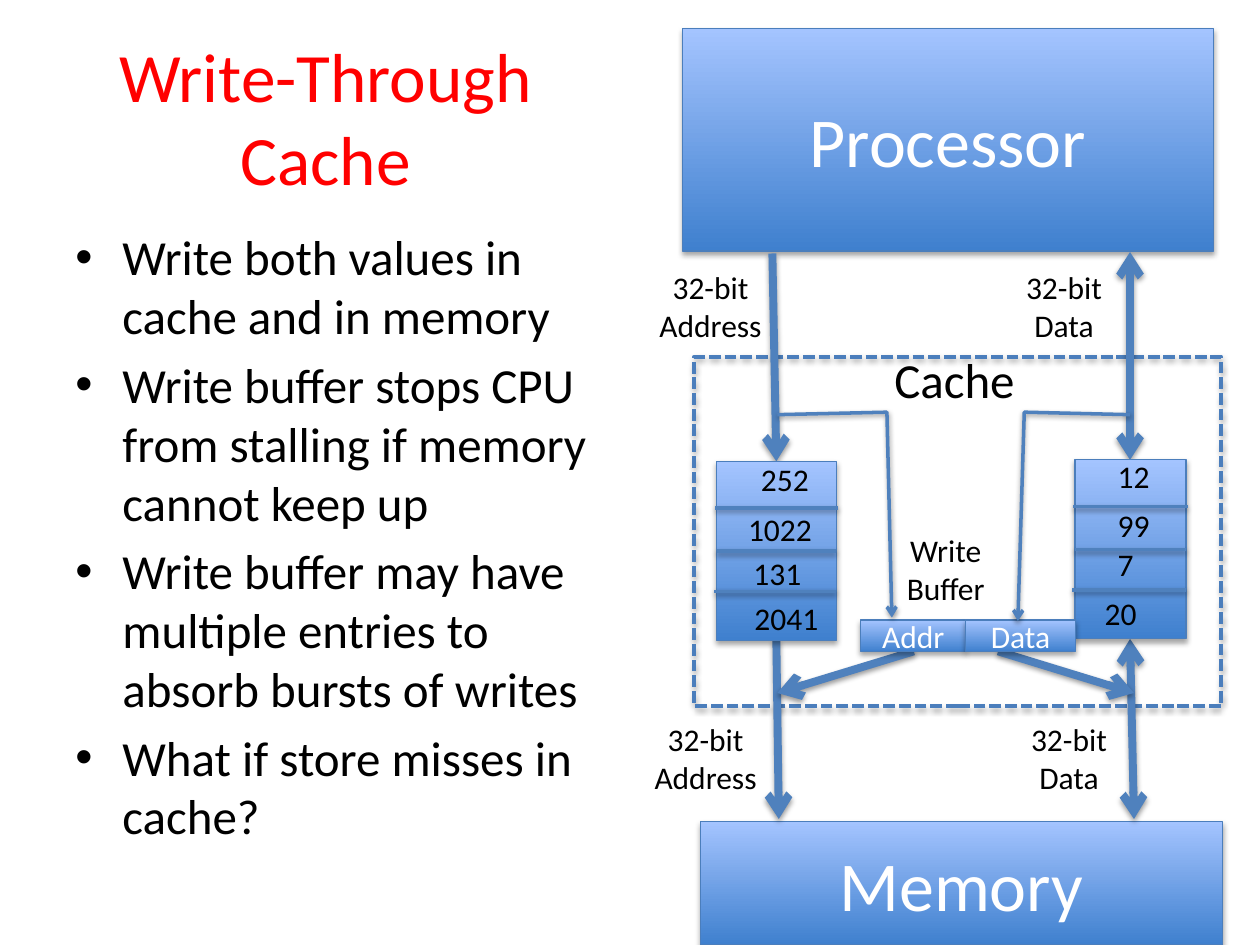
"""Build the write-through cache slide."""
from dataclasses import dataclass

from lxml import etree
from pptx import Presentation
from pptx import util as u
from pptx.dml.color import RGBColor
from pptx.enum import dml, shapes, text
from pptx.oxml.ns import qn


@dataclass(frozen=True)
class Theme:
    font: str = "Calibri"
    red: str = "FF0000"
    black: str = "000000"
    white: str = "FFFFFF"
    dark: str = "3F80CE"
    light: str = "A4C4FF"
    edge: str = "4B7EBC"
    arrow: str = "4F81BD"
    title: float = 39.6
    block: float = 40
    body: float = 28
    label: float = 18
    thick: float = 4.5
    thin: float = 2


@dataclass(frozen=True)
class Box:
    x: float
    y: float
    w: float
    h: float

    def emu(self) -> list[u.Cm]:
        return [u.Cm(v) for v in (self.x, self.y, self.w, self.h)]


@dataclass(frozen=True)
class Block:
    box: Box
    text: str
    size: float


@dataclass(frozen=True)
class Label:
    box: Box
    lines: tuple[str, ...]
    align: text.PP_ALIGN = text.PP_ALIGN.CENTER
    size: float = Theme.label
    wrap: bool = False


@dataclass(frozen=True)
class Arrow:
    start: tuple[float, float]
    end: tuple[float, float]
    both: bool = False


@dataclass(frozen=True)
class Column:
    box: Box
    cells: tuple[tuple[str, float, float, float, bool], ...]


T = Theme()
LEFT = text.PP_ALIGN.LEFT
CELL_H = 1.02
DIVIDERS = ((0.94, -0.03, 0.03), (1.81, 0, 0), (2.62, -0.05, 0))

BLOCKS = (
    Block(Box(13.76, 0.58, 10.7, 4.48), "Processor", T.block),
    Block(Box(14.12, 16.56, 10.52, 2.49), "Memory", T.block),
)
BUFFER = (
    Block(Box(17.35, 12.5, 2.12, 0.64), "Addr", T.label),
    Block(Box(19.47, 12.5, 2.21, 0.64), "Data", T.label),
)
FRAME = Box(14, 7.19, 10.62, 7.04)
LABELS = (
    Label(Box(13.03, 5.28, 2.59, 1.8), ("32-bit", "Address")),
    Label(Box(20.42, 5.28, 2.06, 1.8), ("32-bit", "Data")),
    Label(Box(12.93, 14.4, 2.59, 1.8), ("32-bit", "Address")),
    Label(Box(20.52, 14.4, 2.06, 1.8), ("32-bit", "Data")),
    Label(Box(17.78, 6.93, 2.97, 1.45), ("Cache",), LEFT, T.body),
    Label(Box(17.58, 10.59, 2.97, 1.8), ("Write Buffer",), wrap=True),
)
ARROWS = (
    Arrow((15.57, 5.11), (15.65, 9.3)),
    Arrow((15.65, 12.9), (15.7, 16.51)),
    Arrow((22.78, 5.08), (22.78, 9.27), True),
    Arrow((22.78, 12.88), (22.86, 16.51), True),
    Arrow((18.42, 13.13), (15.67, 13.97)),
    Arrow((20.12, 13.13), (22.86, 13.97)),
)
COLUMNS = (
    Column(Box(14.45, 9.3, 2.41, 3.61), (
        ("252", 15.09, 9.14, 2.16, True), ("1022", 14.83, 10.16, 1.8, False),
        ("131", 14.94, 11.05, 2.16, True), ("2041", 14.96, 11.96, 2.16, True))),
    Column(Box(21.67, 9.27, 2.24, 3.61), (
        ("12", 22.28, 9.09, 1.17, False), ("99", 22.28, 10.08, 1.17, False),
        ("7", 22.28, 10.87, 0.84, False), ("20", 22.02, 11.86, 1.17, False))),
)
TAPS = (
    ((15.67, 8.36), (17.88, 8.31), (17.98, 12.45)),
    ((22.78, 8.36), (20.65, 8.31), (20.52, 12.52)),
)
BULLETS = (
    "Write both values in cache and in memory",
    "Write buffer stops CPU from stalling if memory cannot keep up",
    "Write buffer may have multiple entries to absorb bursts of writes",
    "What if store misses in cache?",
)


def add_shadow(sp, dist: float, alpha: int) -> None:
    pr = sp._element.spPr
    fx = pr.find(qn("a:effectLst"))
    if fx is None:
        fx = etree.SubElement(pr, qn("a:effectLst"))
    sh = etree.SubElement(fx, qn("a:outerShdw"), blurRad=str(u.Pt(3.1)),
                          dist=str(u.Pt(dist)), dir="5400000", rotWithShape="0")
    c = etree.SubElement(sh, qn("a:srgbClr"), val=T.black)
    etree.SubElement(c, qn("a:alpha"), val=str(alpha * 1000))


def style_line(sp, color: str, width: float, ends: tuple[str, ...] = ()) -> None:
    sp.line.color.rgb = RGBColor.from_string(color)
    sp.line.width = u.Pt(width)
    for end in ends:
        etree.SubElement(sp.line._get_or_add_ln(), qn(f"a:{end}"), type="arrow")


def add_run(p, content: str, size: float, color: str) -> None:
    r = p.add_run()
    r.text = content
    r.font.name, r.font.size = T.font, u.Pt(size)
    r.font.color.rgb = RGBColor.from_string(color)


def add_rect(s, box: Box, width: float = 0.75, filled: bool = True):
    sp = s.shapes.add_shape(shapes.MSO_SHAPE.RECTANGLE, *box.emu())
    sp.shadow.inherit = False
    if filled:
        sp.fill.gradient()
        sp.fill.gradient_angle = 90
        for stop, pos, color in zip(sp.fill.gradient_stops, (0, 1), (T.dark, T.light)):
            stop.position = pos
            stop.color.rgb = RGBColor.from_string(color)
    else:
        sp.fill.background()
    style_line(sp, T.edge, width)
    add_shadow(sp, 1.8, 35)
    return sp


def add_block(s, block: Block) -> None:
    tf = add_rect(s, block.box).text_frame
    tf.vertical_anchor = text.MSO_ANCHOR.MIDDLE
    tf.paragraphs[0].alignment = text.PP_ALIGN.CENTER
    add_run(tf.paragraphs[0], block.text, block.size, T.white)


def add_text(s, label: Label, color: str = T.black, grow: bool = True):
    tf = s.shapes.add_textbox(*label.box.emu()).text_frame
    tf.word_wrap = label.wrap
    if grow:
        tf.auto_size = text.MSO_AUTO_SIZE.SHAPE_TO_FIT_TEXT
    for i, line in enumerate(label.lines):
        p = tf.add_paragraph() if i else tf.paragraphs[0]
        p.alignment = label.align
        add_run(p, line, label.size, color)
    return tf


def add_line(s, arrow: Arrow, width: float, ends: tuple[str, ...] = ()) -> None:
    pts = [u.Cm(v) for v in arrow.start + arrow.end]
    sp = s.shapes.add_connector(shapes.MSO_CONNECTOR.STRAIGHT, *pts)
    style_line(sp, T.arrow, width, ends)
    add_shadow(sp, 1.6, 38)


def add_column(s, col: Column) -> None:
    b = col.box
    add_rect(s, b)
    for dy, left, right in DIVIDERS:
        y = b.y + dy
        add_line(s, Arrow((b.x + left, y), (b.x + b.w + right, y)), T.thin)
    for value, x, y, w, wrap in col.cells:
        add_text(s, Label(Box(x, y, w, CELL_H), (value,), LEFT, wrap=wrap))


def add_tap(s, points: tuple[tuple[float, float], ...]) -> None:
    first, *rest = [(u.Cm(x), u.Cm(y)) for x, y in points]
    fb = s.shapes.build_freeform(*first)
    fb.add_line_segments(rest, close=False)
    sp = fb.convert_to_shape()
    sp.shadow.inherit = False
    sp.fill.background()
    style_line(sp, T.arrow, T.thin, ("tailEnd",))
    add_shadow(sp, 1.6, 38)


def add_bullets(s) -> None:
    tf = add_text(s, Label(Box(1.27, 4.45, 11.23, 12.57), BULLETS, LEFT, T.body, True), grow=False)
    for p in tf.paragraphs:
        p.space_before = u.Pt(T.body * 0.2)
        pr = p._p.get_or_add_pPr()
        pr.set("marL", str(u.Cm(0.95)))
        pr.set("indent", str(u.Cm(-0.95)))
        etree.SubElement(pr, qn("a:buFont"), typeface="Arial")
        etree.SubElement(pr, qn("a:buChar"), char="•")


def main() -> None:
    prs = Presentation()
    prs.slide_width, prs.slide_height = u.Cm(25.4), u.Cm(19.05)
    s = prs.slides.add_slide(prs.slide_layouts[6])
    title = Label(Box(1.27, 0.76, 10.59, 3.18), ("Write-Through Cache",), size=T.title, wrap=True)
    add_text(s, title, T.red, grow=False).vertical_anchor = text.MSO_ANCHOR.MIDDLE
    add_bullets(s)
    for block in BLOCKS:
        add_block(s, block)
    add_rect(s, FRAME, 2.25, False).line.dash_style = dml.MSO_LINE.SQUARE_DOT
    for arrow in ARROWS:
        add_line(s, arrow, T.thick, ("headEnd", "tailEnd") if arrow.both else ("tailEnd",))
    for col in COLUMNS:
        add_column(s, col)
    for block in BUFFER:
        add_block(s, block)
    for tap in TAPS:
        add_tap(s, tap)
    for label in LABELS:
        add_text(s, label)
    prs.save("out.pptx")


if __name__ == "__main__":
    main()
